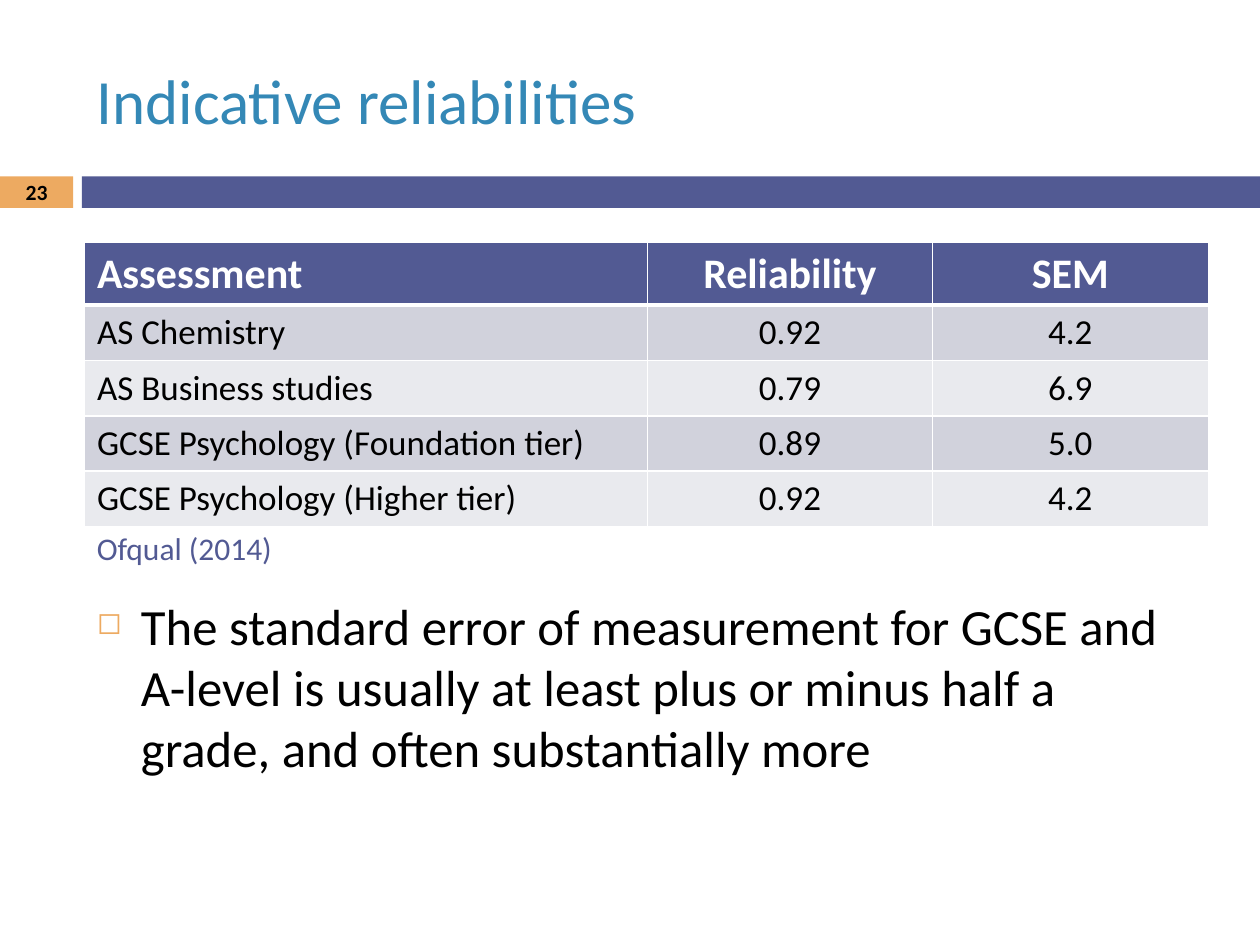
import pptx
import pptx.util
import pptx.dml.color
import pptx.enum.shapes
import pptx.enum.text
import pptx.oxml.ns
import lxml.etree

Inches = pptx.util.Inches
Align = pptx.enum.text.PP_ALIGN
Anchor = pptx.enum.text.MSO_ANCHOR

TITLE = "Indicative reliabilities"
SLIDE_NUMBER = "23"
TABLE_ROWS = [
    ("Assessment", "Reliability", "SEM"),
    ("AS Chemistry", "0.92", "4.2"),
    ("AS Business studies", "0.79", "6.9"),
    ("GCSE Psychology (Foundation tier)", "0.89", "5.0"),
    ("GCSE Psychology (Higher tier)", "0.92", "4.2"),
]
SOURCE = "Ofqual (2014)"
CONCLUSION = ("The standard error of measurement for GCSE and A-level is usually "
              "at least plus or minus half a grade, and often substantially more")

THEME = {
    "font": "Calibri",
    "title": "3488B6", "accent": "EDAA61", "primary": "525A93",
    "text": "000000", "light": "FFFFFF", "bands": ("D1D2DC", "E9EAEE"),
    "title_size": 36, "number_size": 12.4, "header_size": 24,
    "cell_size": 20, "source_size": 18, "body_size": 29,
}
LEFT, CONTENT_WIDTH = 0.67, 8.92
BAR_TOP, BAR_HEIGHT, NUMBER_WIDTH, BAR_LEFT = 1.4, 0.25, 0.58, 0.65
SLIDE_WIDTH, SLIDE_HEIGHT = 10, 7.5
TABLE_TOP = 1.92
COLUMN_WIDTHS = (4.47, 2.26, 2.19)
HEADER_HEIGHT, ROW_HEIGHT = 0.5, 0.44


def rgb(color):
    return pptx.dml.color.RGBColor.from_string(color)


def write_text(frame, text, *, size, color, bold=False, align=Align.LEFT):
    paragraph = frame.paragraphs[0]
    paragraph.alignment = align
    run = paragraph.add_run()
    run.text = text
    run.font.name = THEME["font"]
    run.font.size = pptx.util.Pt(size)
    run.font.bold = bold
    run.font.color.rgb = rgb(color)
    return paragraph


def add_text(slide, box, text, anchor=Anchor.TOP, **text_format):
    frame = slide.shapes.add_textbox(*map(Inches, box)).text_frame
    frame.word_wrap = True
    frame.vertical_anchor = anchor
    return write_text(frame, text, **text_format)


def add_bar(slide, left, width, color):
    shape = slide.shapes.add_shape(
        pptx.enum.shapes.MSO_SHAPE.RECTANGLE,
        *map(Inches, (left, BAR_TOP, width, BAR_HEIGHT)))
    shape.shadow.inherit = False
    shape.fill.solid()
    shape.fill.fore_color.rgb = rgb(color)
    shape.line.fill.background()


def add_element(parent, tag, **attributes):
    return lxml.etree.SubElement(parent, pptx.oxml.ns.qn(tag), attributes)


def set_borders(cell, widths):
    """Draw the cell's borders; widths maps a side (L, R, T, B) to points."""
    properties = cell._tc.get_or_add_tcPr()
    for side, width in widths.items():
        line = add_element(properties, f"a:ln{side}", w=str(pptx.util.Pt(width)))
        add_element(add_element(line, "a:solidFill"), "a:srgbClr", val=THEME["light"])


def add_bullet(paragraph, character, indent, size_percent):
    properties = paragraph._p.get_or_add_pPr()
    properties.set("marL", str(Inches(indent)))
    properties.set("indent", str(-Inches(indent)))
    add_element(add_element(properties, "a:buClr"), "a:srgbClr", val=THEME["accent"])
    add_element(properties, "a:buSzPct", val=str(size_percent * 1000))
    add_element(properties, "a:buChar", char=character)


def add_reliability_table(slide):
    heights = [HEADER_HEIGHT] + [ROW_HEIGHT] * (len(TABLE_ROWS) - 1)
    table = slide.shapes.add_table(
        len(TABLE_ROWS), len(COLUMN_WIDTHS),
        *map(Inches, (LEFT, TABLE_TOP, CONTENT_WIDTH, sum(heights)))).table
    for column, width in zip(table.columns, COLUMN_WIDTHS):
        column.width = Inches(width)
    for row_index, values in enumerate(TABLE_ROWS):
        table.rows[row_index].height = Inches(heights[row_index])
        header = row_index == 0
        fill = THEME["primary"] if header else THEME["bands"][(row_index - 1) % 2]
        for column_index, value in enumerate(values):
            cell = table.cell(row_index, column_index)
            set_borders(cell, {"L": 1, "R": 1, "T": 3 if row_index == 1 else 1,
                               "B": 3 if header else 1})
            cell.fill.solid()
            cell.fill.fore_color.rgb = rgb(fill)
            write_text(cell.text_frame, value, bold=header,
                       size=THEME["header_size" if header else "cell_size"],
                       color=THEME["light" if header else "text"],
                       align=Align.CENTER if column_index else Align.LEFT)


def main():
    presentation = pptx.Presentation()
    presentation.slide_width = Inches(SLIDE_WIDTH)
    presentation.slide_height = Inches(SLIDE_HEIGHT)
    slide = presentation.slides.add_slide(presentation.slide_layouts[6])

    add_bar(slide, 0, NUMBER_WIDTH, THEME["accent"])
    add_bar(slide, BAR_LEFT, SLIDE_WIDTH - BAR_LEFT, THEME["primary"])
    add_text(slide, (LEFT, 0.25, CONTENT_WIDTH, 1.08), TITLE, Anchor.MIDDLE,
             size=THEME["title_size"], color=THEME["title"])
    add_text(slide, (0, 1.39, NUMBER_WIDTH, 0.27), SLIDE_NUMBER, Anchor.MIDDLE,
             size=THEME["number_size"], color=THEME["text"], bold=True,
             align=Align.CENTER)
    add_reliability_table(slide)
    conclusion = add_text(slide, (LEFT, 4.67, CONTENT_WIDTH, 2.41), CONCLUSION,
                          size=THEME["body_size"], color=THEME["text"])
    conclusion.space_before = pptx.util.Pt(7)
    add_bullet(conclusion, "◻", indent=0.35, size_percent=60)
    add_text(slide, (LEFT, 4.15, 2.91, 0.4), SOURCE,
             size=THEME["source_size"], color=THEME["primary"])
    presentation.save("out.pptx")


if __name__ == "__main__":
    main()
